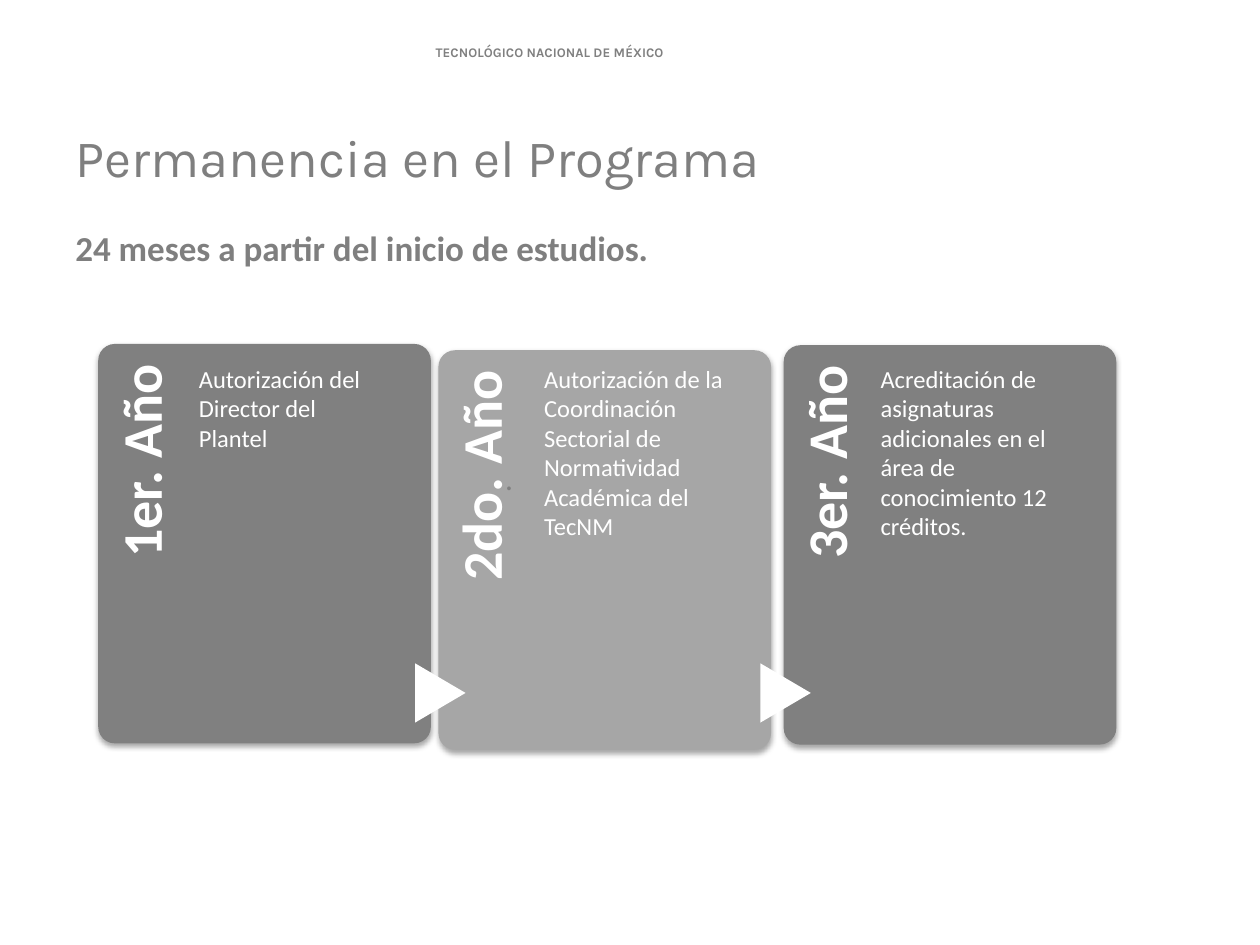
from dataclasses import dataclass

from lxml import etree
from pptx import Presentation
from pptx.dml.color import RGBColor
from pptx.enum import shapes, text
from pptx.oxml import ns
from pptx.util import Inches, Pt


@dataclass(frozen=True)
class Theme:
    heading_font: str = "Karla"
    body_font: str = "Calibri"
    gray: str = "7F7F7F"
    dark: str = "808080"
    light: str = "A6A6A6"
    white: str = "FFFFFF"
    header_size: float = 7.5
    title_size: int = 30
    lead_size: int = 20
    year_size: int = 32
    dot_size: int = 18
    detail_size: int = 14


THEME = Theme()
CARD_WIDTH, CARD_HEIGHT = 2.64, 3.17
DETAIL_TOP, ARROW_TOP = 2.84, 5.3

# left, top, fill, year, requirement, offset and width of the requirement
YEARS = [
    (0.78, 2.73, THEME.dark, "1er. Año",
     "Autorización del Director del Plantel", 0.7, 1.65),
    (3.48, 2.78, THEME.light, "2do. Año",
     "Autorización de la Coordinación Sectorial de Normatividad Académica del TecNM",
     0.74, 1.69),
    (6.22, 2.74, THEME.dark, "3er. Año",
     "Acreditación de asignaturas adicionales en el área de conocimiento 12 créditos.",
     0.67, 1.75),
]


def write(slide, box, words, *, size, color, font=THEME.body_font, bold=False,
          align=text.PP_ALIGN.LEFT, anchor=text.MSO_ANCHOR.TOP,
          insets=(0.1, 0.05, 0.1, 0.05), line_spacing=1.0, rotation=0):
    label = slide.shapes.add_textbox(*map(Inches, box))
    label.rotation = rotation
    frame = label.text_frame
    frame.word_wrap = True
    frame.vertical_anchor = anchor
    (frame.margin_left, frame.margin_top,
     frame.margin_right, frame.margin_bottom) = map(Inches, insets)
    paragraph = frame.paragraphs[0]
    paragraph.alignment = align
    paragraph.line_spacing = line_spacing
    run = paragraph.add_run()
    run.text = words
    run.font.name = font
    run.font.size = Pt(size)
    run.font.bold = bold
    run.font.color.rgb = RGBColor.from_string(color)


def filled_shape(slide, kind, box, color):
    shape = slide.shapes.add_shape(kind, *map(Inches, box))
    shape.shadow.inherit = False
    shape.fill.solid()
    shape.fill.fore_color.rgb = RGBColor.from_string(color)
    shape.line.fill.background()
    return shape


def drop_shadow(shape):
    """Add a soft shadow straight below the shape."""
    effects = shape._element.spPr.find(ns.qn("a:effectLst"))
    shadow = etree.SubElement(
        effects, ns.qn("a:outerShdw"), blurRad=str(Pt(3.1)), dist=str(Pt(1.8)),
        dir="5400000", rotWithShape="0")
    color = etree.SubElement(shadow, ns.qn("a:srgbClr"), val="000000")
    etree.SubElement(color, ns.qn("a:alpha"), val="35000")


def heading(slide, left, top, width):
    write(slide, (3.36, 0.3, 3.1, 0.23), "TECNOLÓGICO NACIONAL DE MÉXICO",
          size=THEME.header_size, color=THEME.dark, font=THEME.heading_font, bold=True)
    write(slide, (left, top, width, 1.25), "Permanencia en el Programa",
          size=THEME.title_size, color=THEME.gray, font=THEME.heading_font,
          anchor=text.MSO_ANCHOR.MIDDLE)
    write(slide, (left, top + 1.13, width, 0.5),
          "24 meses a partir del inicio de estudios.",
          size=THEME.lead_size, color=THEME.gray, bold=True)


def year_card(slide, left, top, fill, year):
    card = filled_shape(slide, shapes.MSO_SHAPE.ROUNDED_RECTANGLE,
                        (left, top, CARD_WIDTH, CARD_HEIGHT), fill)
    card.adjustments[0] = 0.05
    drop_shadow(card)
    # The strip is turned about its centre to run up the card's left edge.
    length, depth = 2.6, 0.53
    shift = (length - depth) / 2
    write(slide, (left - shift, top + shift, length, depth), year,
          size=THEME.year_size, color=THEME.white, bold=True,
          align=text.PP_ALIGN.RIGHT, insets=(0, 0.12, 0.16, 0),
          line_spacing=0.9, rotation=270)


def arrow_into(slide, card_left):
    arrow = filled_shape(slide, shapes.MSO_SHAPE.FLOWCHART_EXTRACT,
                         (card_left - 0.22, ARROW_TOP, 0.47, 0.4), THEME.white)
    arrow.rotation = 90


def timeline(slide):
    for index, (left, top, fill, year, detail, offset, width) in enumerate(YEARS):
        year_card(slide, left, top, fill, year)
        if index:
            arrow_into(slide, left)
        write(slide, (left + offset, DETAIL_TOP, width, 1.82), detail,
              size=THEME.detail_size, color=THEME.white)
    write(slide, (4.01, 3.68, 1.97, 0.3), ".", size=THEME.dot_size,
          color=THEME.gray, insets=(0, 0, 0, 0), line_spacing=0.9)


def main():
    deck = Presentation()
    deck.slide_width, deck.slide_height = Inches(10), Inches(7.5)
    slide = deck.slides.add_slide(deck.slide_layouts[6])
    heading(slide, 0.5, 0.62, 9)
    timeline(slide)
    deck.save("out.pptx")


if __name__ == "__main__":
    main()
